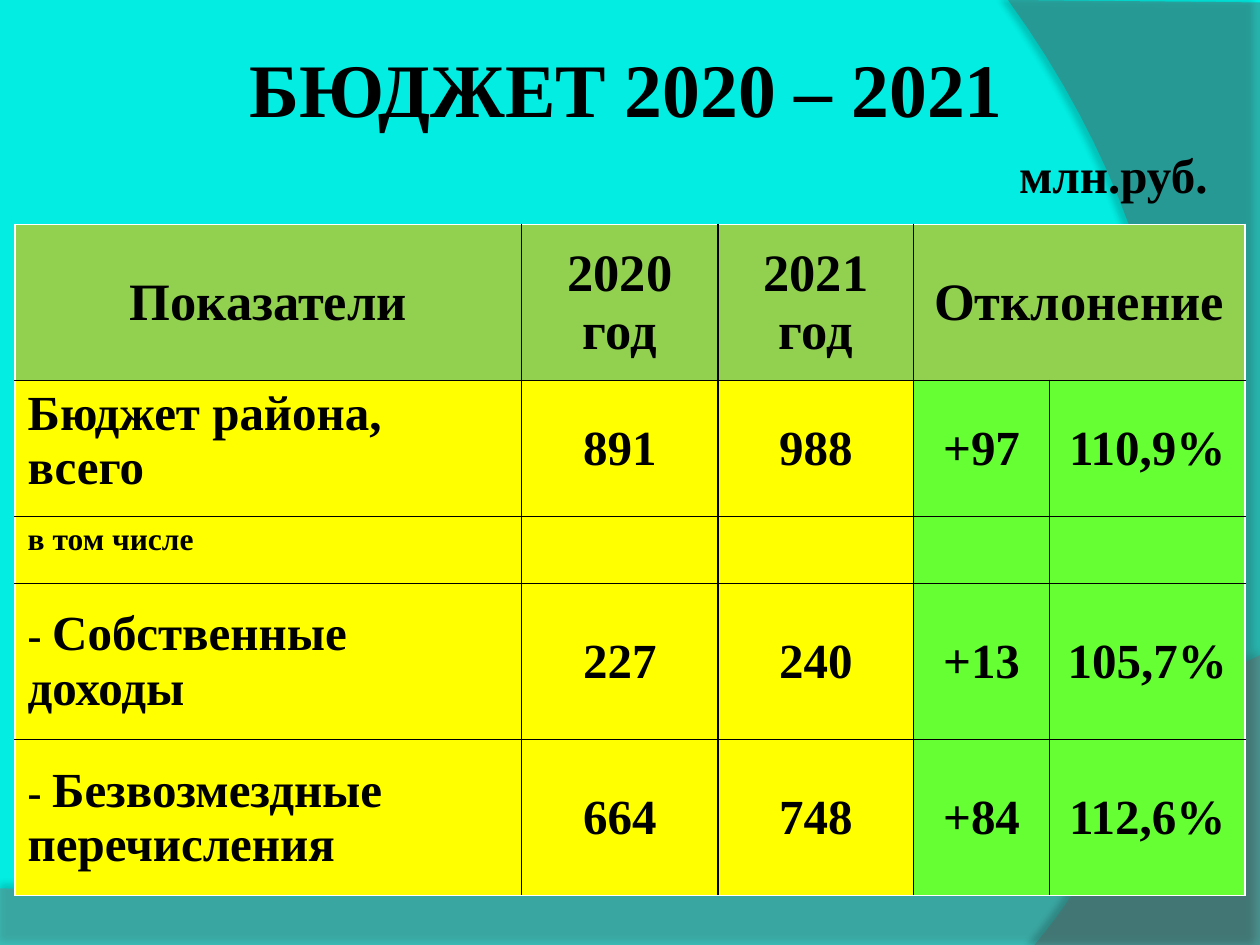
"""Build the 2020 – 2021 district budget slide with its comparison table."""
from lxml import etree
from pptx import Presentation
from pptx.dml.color import RGBColor
from pptx.enum import text
from pptx.oxml import parse_xml
from pptx.oxml.ns import nsdecls, qn
from pptx.util import Inches, Pt

BLACK = RGBColor(0x00, 0x00, 0x00)
WHITE = RGBColor(0xFF, 0xFF, 0xFF)
CYAN = RGBColor(0x03, 0xED, 0xE2)
GRAY = RGBColor(0x7F, 0x7F, 0x7F)
DARK_GRAY = RGBColor(0x5E, 0x5E, 0x5E)
OLIVE = RGBColor(0x92, 0xD0, 0x50)
YELLOW = RGBColor(0xFF, 0xFF, 0x00)
GREEN = RGBColor(0x66, 0xFF, 0x33)
CENTER = text.PP_ALIGN.CENTER
MIDDLE = text.MSO_ANCHOR.MIDDLE


def add_run(p, content, size):
    r = p.add_run()
    r.text = content
    r.font.name = "Times New Roman"
    r.font.size = Pt(size)
    r.font.bold = True
    r.font.color.rgb = BLACK


def set_border(cell, side, color):
    ln = parse_xml(
        f'<a:{side} {nsdecls("a")} w="12700"><a:solidFill>'
        f'<a:srgbClr val="{color}"/></a:solidFill></a:{side}>')
    tcPr = cell._tc.get_or_add_tcPr()
    tcPr.insert(len(tcPr.findall("*")) - 1, ln)


prs = Presentation()
prs.slide_width, prs.slide_height = Inches(10), Inches(7.5)
s = prs.slides.add_slide(prs.slide_layouts[6])
s.background.fill.solid()
s.background.fill.fore_color.rgb = CYAN

waves = [
    ([(0, 7.05), (0, 7.51), (10, 7.51), (10, 5.2)],
     [(5.59, 7.29), (3.91, 7.19), (0, 7.05)], GRAY, 45, 35, 3.5, 270),
    ([(10, 0.02), (10, 7.5), (8.21, 7.5)],
     [(9.35, 6.19), (10.18, 3), (8, 0)], DARK_GRAY, 40, 45, 4, 180),
]
STEPS = 40
for corners, bend, color, opacity, shade, distance, angle in waves:
    ctrl = [corners[-1]] + bend
    curve = []
    for i in range(1, STEPS + 1):
        t = i / STEPS
        weights = [(1 - t) ** 3, 3 * t * (1 - t) ** 2, 3 * t * t * (1 - t), t ** 3]
        curve.append(tuple(sum(w * c[k] for w, c in zip(weights, ctrl)) for k in (0, 1)))
    points = [(Inches(x), Inches(y)) for x, y in corners + curve]
    fb = s.shapes.build_freeform(*points[0])
    fb.add_line_segments(points[1:], close=True)
    sp = fb.convert_to_shape()
    sp.fill.solid()
    sp.fill.fore_color.rgb = color
    sp.line.fill.background()
    clr = sp._element.spPr.find(qn("a:solidFill")).find(qn("a:srgbClr"))
    etree.SubElement(clr, qn("a:alpha"), val=str(opacity * 1000))
    sp._element.spPr.append(parse_xml(
        f'<a:effectLst {nsdecls("a")}><a:outerShdw blurRad="{Pt(4)}" '
        f'dist="{Pt(distance)}" dir="{angle * 60000}" algn="ctr" rotWithShape="0">'
        f'<a:srgbClr val="{BLACK}"><a:alpha val="{shade * 1000}"/></a:srgbClr>'
        '</a:outerShdw></a:effectLst>'))

widths = [4.02, 1.56, 1.55, 1.08, 1.55]
heights = [1.24, 1.08, 0.53, 1.24, 1.24]
rows = [
    ["Показатели", "2020 год", "2021 год", "Отклонение", ""],
    ["Бюджет района, всего", "891", "988", "+97", "110,9%"],
    ["в том числе", "", "", "", ""],
    ["Собственные доходы", "227", "240", "+13", "105,7%"],
    ["Безвозмездные перечисления", "664", "748", "+84", "112,6%"],
]
table = s.shapes.add_table(
    len(rows), len(widths), Inches(0.12), Inches(1.78),
    Inches(sum(widths)), Inches(sum(heights))).table
for column, width in zip(table.columns, widths):
    column.width = Inches(width)
for row, height in zip(table.rows, heights):
    row.height = Inches(height)
table.cell(0, 3).merge(table.cell(0, 4))

last_row, last_col = len(rows) - 1, len(widths) - 1
for i, row in enumerate(rows):
    for j, content in enumerate(row):
        cell = table.cell(i, j)
        cell.fill.solid()
        cell.fill.fore_color.rgb = OLIVE if i == 0 else YELLOW if j < 3 else GREEN
        right_edge = j == last_col or (i, j) == (0, 3)
        edges = [("lnL", j == 0), ("lnR", right_edge),
                 ("lnT", i == 0), ("lnB", i == last_row)]
        for side, outer in edges:
            set_border(cell, side, WHITE if outer else BLACK)
        if not content:
            continue
        p = cell.text_frame.paragraphs[0]
        if j == 0 and i > 0:
            cell.margin_right = Inches(0.15)
        else:
            p.alignment = CENTER
        if j > 0 or i not in (1, 2):
            cell.vertical_anchor = MIDDLE
        if j == 0 and i > 2:
            add_run(p, "- ", 24)
        add_run(p, content, 30 if i == 0 else 18 if i == 2 else 28)

tb = s.shapes.add_textbox(Inches(1.84), Inches(0.26), Inches(6.32), Inches(0.87))
tf = tb.text_frame
tf.word_wrap = True
tf.vertical_anchor = MIDDLE
tf.margin_left = tf.margin_right = tf.margin_top = tf.margin_bottom = Inches(0.05)
p = tf.paragraphs[0]
p.alignment = text.PP_ALIGN.RIGHT
add_run(p, "БЮДЖЕТ 2020 – 2021 ", 43.2)

tb = s.shapes.add_textbox(Inches(7.99), Inches(1.1), Inches(1.71), Inches(0.57))
tf = tb.text_frame
tf.word_wrap = False
tf.auto_size = text.MSO_AUTO_SIZE.SHAPE_TO_FIT_TEXT
add_run(tf.paragraphs[0], "млн.руб.", 28)

prs.save("out.pptx")
